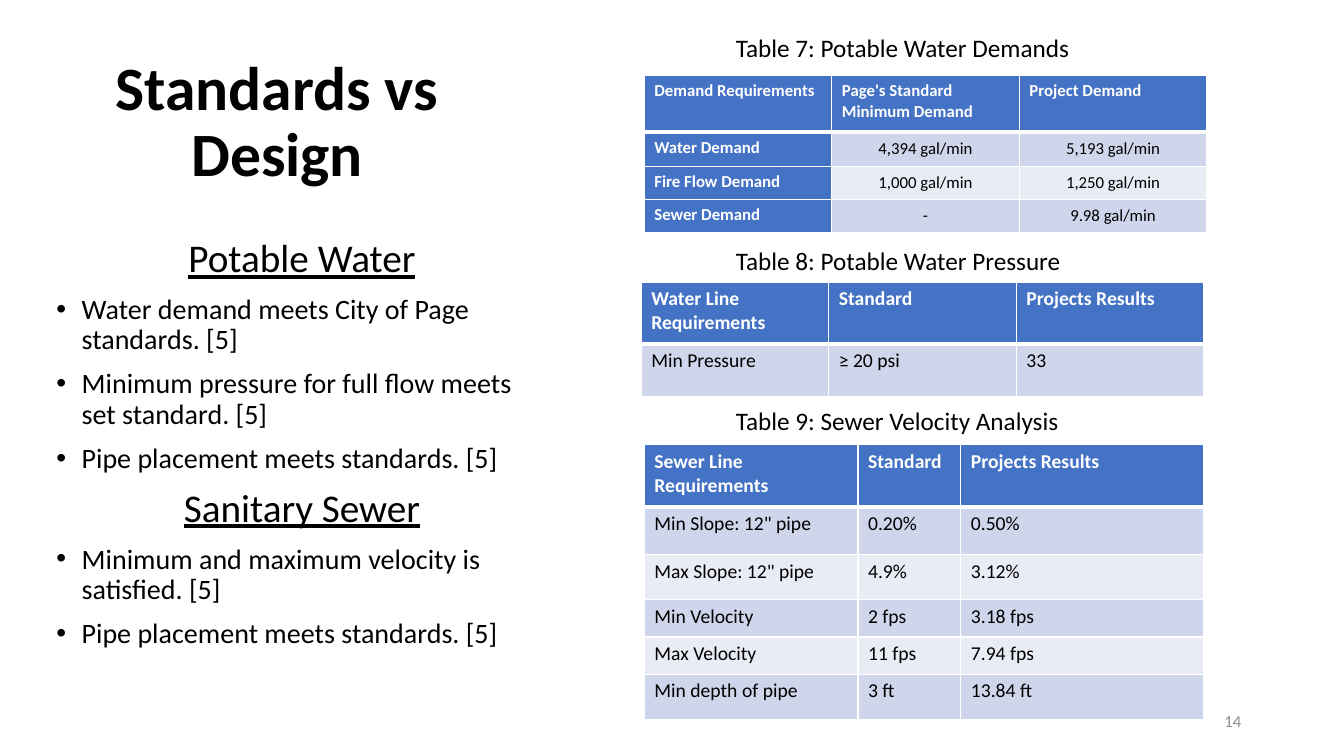
from lxml import etree
from pptx import Presentation
from pptx import util as u
from pptx.dml.color import RGBColor
from pptx.enum import text as t
from pptx.oxml.ns import qn

COLORS = {"white": "FFFFFF", "black": "000000", "grey": "8C8C8C",
          "header": "4472C4", "band_dark": "CFD5EA", "band_light": "E9EBF5"}


class SlideBuilder:
    font = "Calibri"

    def __init__(self, slide):
        self.slide = slide

    def color(self, name):
        return RGBColor.from_string(COLORS[name])

    def place(self, shape, left, top, width, height):
        shape.left, shape.top = u.Inches(left), u.Inches(top)
        shape.width, shape.height = u.Inches(width), u.Inches(height)

    def add_run(self, paragraph, words, size, color="black", bold=False, underline=False):
        run = paragraph.add_run()
        run.text = words
        run.font.name = self.font
        run.font.size = u.Pt(size)
        run.font.bold = bold
        run.font.underline = underline
        run.font.color.rgb = self.color(color)

    def title(self, words, box):
        shape = self.slide.shapes.title
        self.place(shape, *box)
        frame = shape.text_frame
        frame.auto_size = t.MSO_AUTO_SIZE.NONE
        frame.vertical_anchor = t.MSO_ANCHOR.MIDDLE
        paragraph = frame.paragraphs[0]
        paragraph.alignment = t.PP_ALIGN.CENTER
        paragraph.line_spacing = 0.9
        self.add_run(paragraph, words, 44, bold=True)

    def body(self, sections, box):
        """Fill the body placeholder with (heading, bullet points) sections."""
        shape = self.slide.placeholders[1]
        self.place(shape, *box)
        frame = shape.text_frame
        frame.auto_size = t.MSO_AUTO_SIZE.NONE
        frame.vertical_anchor = t.MSO_ANCHOR.TOP
        lines = [(words, words == heading) for heading, points in sections
                 for words in (heading, *points)]
        for index, (words, is_heading) in enumerate(lines):
            paragraph = frame.add_paragraph() if index else frame.paragraphs[0]
            paragraph.line_spacing = 0.9
            paragraph.space_before = u.Pt(10)
            self.set_bullet(paragraph, not is_heading)
            if is_heading:
                paragraph.alignment = t.PP_ALIGN.CENTER
                self.add_run(paragraph, words, 28, underline=True)
            else:
                paragraph.alignment = t.PP_ALIGN.LEFT
                self.add_run(paragraph, words, 20)

    def set_bullet(self, paragraph, shown):
        properties = paragraph._p.get_or_add_pPr()
        indent = u.Inches(0.25) if shown else 0
        properties.set("marL", str(indent))
        properties.set("indent", str(-indent))
        if shown:
            etree.SubElement(properties, qn("a:buFont"), typeface="Arial")
            etree.SubElement(properties, qn("a:buChar"), char="•")
        else:
            etree.SubElement(properties, qn("a:buNone"))

    def text_box(self, words, box, size, color="black", align=t.PP_ALIGN.LEFT,
                 anchor=t.MSO_ANCHOR.TOP, wrap=False):
        shape = self.slide.shapes.add_textbox(*map(u.Inches, box))
        frame = shape.text_frame
        frame.word_wrap = wrap
        frame.vertical_anchor = anchor
        frame.paragraphs[0].alignment = align
        self.add_run(frame.paragraphs[0], words, size, color)

    def set_borders(self, cell, top, bottom):
        properties = cell._tc.get_or_add_tcPr()
        for side, points in (("L", 1), ("R", 1), ("T", top), ("B", bottom)):
            line = etree.SubElement(properties, qn(f"a:ln{side}"), w=str(u.Pt(points)))
            fill = etree.SubElement(line, qn("a:solidFill"))
            etree.SubElement(fill, qn("a:srgbClr"), val=COLORS["white"])

    def table(self, rows, left, top, widths, heights, size, row_headers=False):
        """Add a banded table; row_headers colours the first column and centres the rest."""
        frame = self.slide.shapes.add_table(
            len(rows), len(widths), u.Inches(left), u.Inches(top),
            u.Inches(sum(widths)), u.Inches(sum(heights)))
        table = frame.table
        table.first_col = row_headers
        for column, width in zip(table.columns, widths):
            column.width = u.Inches(width)
        for row, height in zip(table.rows, heights):
            row.height = u.Inches(height)
        for r, values in enumerate(rows):
            for c, value in enumerate(values):
                cell = table.cell(r, c)
                is_header = r == 0 or (row_headers and c == 0)
                self.set_borders(cell, 3 if r == 1 else 1, 3 if r == 0 else 1)
                band = "band_dark" if r % 2 else "band_light"
                cell.fill.solid()
                cell.fill.fore_color.rgb = self.color("header" if is_header else band)
                paragraph = cell.text_frame.paragraphs[0]
                if row_headers and not is_header:
                    paragraph.alignment = t.PP_ALIGN.CENTER
                    cell.vertical_anchor = t.MSO_ANCHOR.MIDDLE
                self.add_run(paragraph, value, size,
                             "white" if is_header else "black", bold=is_header)


def main():
    presentation = Presentation()
    presentation.slide_width = u.Inches(13.33)
    presentation.slide_height = u.Inches(7.5)
    builder = SlideBuilder(presentation.slides.add_slide(presentation.slide_layouts[1]))

    builder.title("Standards vs Design", (0.92, 0.4, 3.66, 1.65))
    builder.body([
        ("Potable Water", ["Water demand meets City of Page standards. [5]",
                           "Minimum pressure for full flow meets set standard. [5]",
                           "Pipe placement meets standards. [5]"]),
        ("Sanitary Sewer", ["Minimum and maximum velocity is satisfied. [5]",
                            "Pipe placement meets standards. [5]"]),
    ], (0.46, 2.32, 5.07, 4.43))
    builder.text_box("14", (9.41, 6.95, 3, 0.4), 12, "grey", t.PP_ALIGN.RIGHT,
                     t.MSO_ANCHOR.MIDDLE, wrap=True)

    builder.table([
        ["Demand Requirements", "Page's Standard Minimum Demand", "Project Demand"],
        ["Water Demand", "4,394 gal/min", "5,193 gal/min"],
        ["Fire Flow Demand", "1,000 gal/min", "1,250 gal/min"],
        ["Sewer Demand", "-", "9.98 gal/min"],
    ], 6.39, 0.75, [1.86] * 3, [0.56, 0.34, 0.33, 0.33], 12, row_headers=True)
    builder.table([
        ["Sewer Line Requirements", "Standard", "Projects Results"],
        ['Min Slope: 12" pipe', "0.20%", "0.50%"],
        ['Max Slope: 12" pipe', "4.9%", "3.12%"],
        ["Min Velocity", "2 fps", "3.18 fps"],
        ["Max Velocity", "11 fps", "7.94 fps"],
        ["Min depth of pipe", "3 ft", "13.84 ft"],
    ], 6.39, 4.41, [2.12, 1.02, 2.41], [0.62, 0.47, 0.45, 0.37, 0.37, 0.45], 14)
    builder.table([
        ["Water Line Requirements", "Standard", "Projects Results"],
        ["Min Pressure", "≥ 20 psi", "33"],
    ], 6.36, 2.8, [1.86] * 3, [0.61, 0.52], 14)

    for caption, top, width in (("Table 7: Potable Water Demands", 0.27, 3.55),
                                ("Table 8: Potable Water Pressure", 2.38, 3.46),
                                ("Table 9: Sewer Velocity Analysis", 3.97, 3.44)):
        builder.text_box(caption, (7.2, top, width, 0.4), 18)

    presentation.save("out.pptx")


if __name__ == "__main__":
    main()
